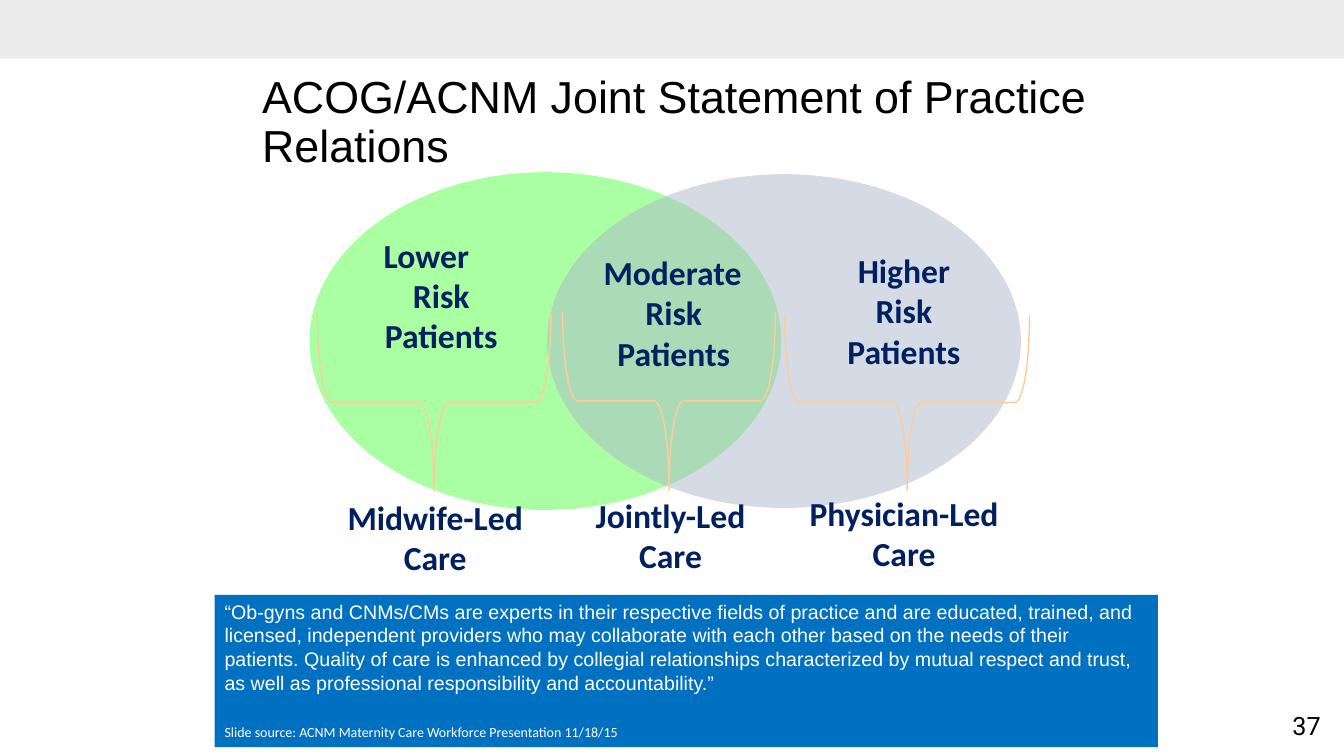
"""Build the slide on joint practice relations with its care-model diagram."""
from dataclasses import dataclass

from lxml.etree import SubElement
from pptx import Presentation
from pptx.dml.color import RGBColor
from pptx.enum.shapes import MSO_SHAPE as Shape
from pptx.enum.text import MSO_ANCHOR as Anchor, MSO_AUTO_SIZE as AutoSize, PP_ALIGN as Align
from pptx.oxml.ns import qn
from pptx.util import Cm, Pt

COLORS = {"band": "E3E3E3", "green": "57FF47", "gray": "ACB8CA", "navy": "002060",
          "brace": "FFCC99", "blue": "0070C0", "white": "FFFFFF", "black": "000000"}
QUOTE = ("“Ob-gyns and CNMs/CMs are experts in their respective fields of practice and are "
         "educated, trained, and licensed, independent providers who may collaborate with each "
         "other based on the needs of their patients. Quality of care is enhanced by collegial "
         "relationships characterized by mutual respect and trust, as well as professional "
         "responsibility and accountability.”")
SOURCE = "Slide source: ACNM Maternity Care Workforce Presentation 11/18/15"


@dataclass(frozen=True)
class Box:
    """Position and size in centimetres."""
    left: float
    top: float
    width: float
    height: float

    def emu(self):
        """Return the four lengths for a shape."""
        return Cm(self.left), Cm(self.top), Cm(self.width), Cm(self.height)


@dataclass(frozen=True)
class Area:
    """Filled translucent or solid shape without outline."""
    kind: Shape
    box: Box
    color: str
    opacity: int = 100


@dataclass(frozen=True)
class Label:
    """Bold label, one paragraph a line."""
    box: Box
    lines: tuple[str, ...]
    first: Align = Align.CENTER


BAND = Area(Shape.RECTANGLE, Box(0, 0, 33.87, 1.47), "band", 70)
CIRCLES = (
    Area(Shape.OVAL, Box(7.8, 4.34, 11.89, 8.51), "green", 50),
    Area(Shape.OVAL, Box(13.79, 4.39, 11.94, 8.41), "gray", 50),
)
PANEL = Area(Shape.RECTANGLE, Box(5.41, 14.99, 23.77, 3.84), "blue")
BRACES = (
    Box(8.69, 7.19, 4.5, 5.89),
    Box(14.61, 7.42, 4.5, 5.36),
    Box(20.65, 7.06, 4.42, 6.17),
)
LABELS = (
    Label(Box(9.42, 5.79, 3.4, 3.33), ("Lower", "Risk", "Patients"), Align.LEFT),
    Label(Box(14.96, 6.22, 4.04, 3.33), ("Moderate", "Risk", "Patients"), Align.LEFT),
    Label(Box(21.08, 6.17, 3.4, 3.33), ("Higher", "Risk", "Patients")),
    Label(Box(8.48, 12.4, 4.98, 2.31), ("Midwife-Led", "Care")),
    Label(Box(14.73, 12.34, 4.34, 2.31), ("Jointly-Led", "Care")),
    Label(Box(20.12, 12.29, 5.33, 2.31), ("Physician-Led", "Care")),
)


def rgb(name: str) -> RGBColor:
    """Look up a named colour."""
    return RGBColor.from_string(COLORS[name])


def add_run(p, text: str, size: int, font: str, color: str, bold: bool = False) -> None:
    """Append one formatted run to a paragraph."""
    r = p.add_run()
    r.text = text
    r.font.size, r.font.name, r.font.bold = Pt(size), font, bold
    r.font.color.rgb = rgb(color)


def add_area(s, area: Area):
    """Draw a filled shape with its opacity."""
    sp = s.shapes.add_shape(area.kind, *area.box.emu())
    sp.shadow.inherit = False
    sp.line.fill.background()
    sp.fill.solid()
    sp.fill.fore_color.rgb = rgb(area.color)
    if area.opacity < 100:
        color = sp.fill._xPr.find(qn("a:solidFill"))[0]
        SubElement(color, qn("a:alpha"), val=str(area.opacity * 1000))
    return sp


def add_brace(s, box: Box) -> None:
    """Draw a brace that points down."""
    sp = s.shapes.add_shape(Shape.LEFT_BRACE, *box.emu())
    sp.shadow.inherit = False
    sp.rotation = 270
    sp.fill.background()
    sp.line.color.rgb = rgb("brace")
    sp.line.width = Pt(1)


def add_label(s, label: Label) -> None:
    """Draw a label of the diagram."""
    tf = s.shapes.add_textbox(*label.box.emu()).text_frame
    tf.word_wrap = True
    for i, line in enumerate(label.lines):
        p = tf.add_paragraph() if i else tf.paragraphs[0]
        p.alignment = Align.CENTER if i else label.first
        add_run(p, line, 24, "Calibri", "navy", bold=True)


def add_title(s) -> None:
    """Place and format the title."""
    sp = s.shapes.title
    sp.left, sp.top, sp.width, sp.height = Box(6.35, 1.27, 21.89, 3.68).emu()
    tf = sp.text_frame
    tf.word_wrap, tf.auto_size = True, AutoSize.NONE
    tf.vertical_anchor = Anchor.MIDDLE
    p = tf.paragraphs[0]
    p.alignment, p.line_spacing = Align.LEFT, 0.9
    add_run(p, "ACOG/ACNM Joint Statement of Practice Relations", 32, "Arial", "black")


def add_quote(s) -> None:
    """Draw the panel with the quotation and its source."""
    tf = add_area(s, PANEL).text_frame
    tf.word_wrap, tf.vertical_anchor = True, Anchor.TOP
    p = tf.paragraphs[0]
    p.alignment = Align.LEFT
    add_run(p, QUOTE, 14, "Arial", "white")
    p = tf.add_paragraph()
    p.alignment, p.space_before = Align.LEFT, Pt(21)
    add_run(p, SOURCE, 10, "Calibri", "white")


def add_page_number(s) -> None:
    """Write the page number in the corner."""
    tf = s.shapes.add_textbox(*Box(32.28, 17.78, 1.3, 1.02).emu()).text_frame
    tf.word_wrap = False
    p = tf.paragraphs[0]
    p.alignment = Align.CENTER
    add_run(p, "37", 18, "Roboto", "black")


def main() -> None:
    """Build and save the slide."""
    prs = Presentation()
    prs.slide_width, prs.slide_height = Cm(33.87), Cm(19.05)
    s = prs.slides.add_slide(prs.slide_layouts[5])
    add_area(s, BAND)
    add_page_number(s)
    for circle in CIRCLES:
        add_area(s, circle)
    for brace in BRACES:
        add_brace(s, brace)
    for label in LABELS:
        add_label(s, label)
    add_title(s)
    add_quote(s)
    prs.save("out.pptx")


if __name__ == "__main__":
    main()
